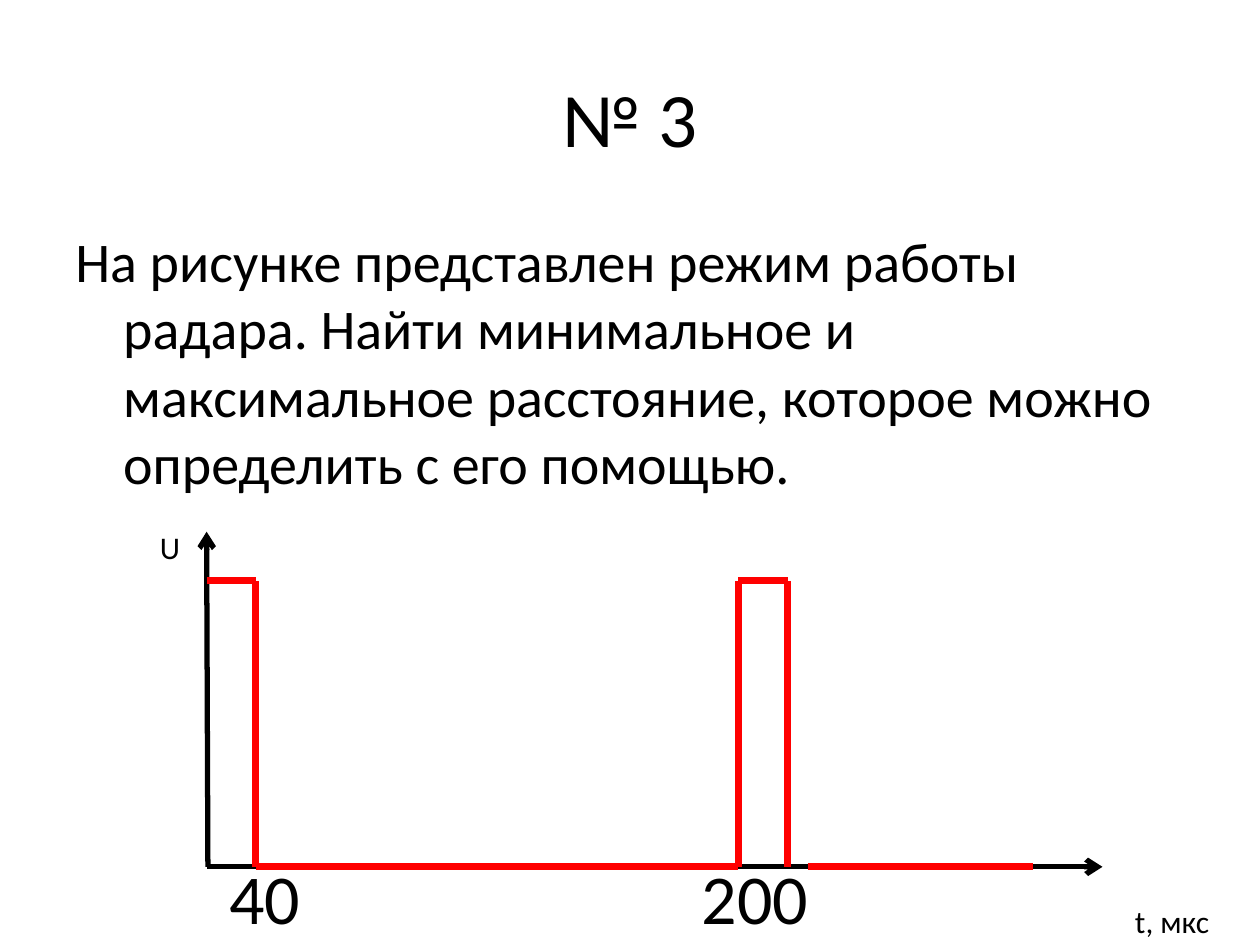
from lxml import etree
from pptx import Presentation
from pptx.dml.color import RGBColor
from pptx.enum.shapes import MSO_CONNECTOR
from pptx.enum.text import MSO_ANCHOR, PP_ALIGN
from pptx.oxml.ns import qn
from pptx.util import Inches, Pt

STRAIGHT = MSO_CONNECTOR.STRAIGHT
LEFT, CENTER = PP_ALIGN.LEFT, PP_ALIGN.CENTER
TOP, MIDDLE = MSO_ANCHOR.TOP, MSO_ANCHOR.MIDDLE
BLACK, RED = "000000", "FF0000"

presentation = Presentation()
presentation.slide_width = Inches(10)
presentation.slide_height = Inches(7.5)
slide = presentation.slides.add_slide(presentation.slide_layouts[6])

# All positions are percentages of the slide's width and height.
column = presentation.slide_width / 100
row = presentation.slide_height / 100


def add_text(text, left, top, width, height, size, align=LEFT, anchor=TOP, wrap=True):
    box = slide.shapes.add_textbox(
        int(left * column), int(top * row), int(width * column), int(height * row))
    frame = box.text_frame
    frame.text = text
    frame.word_wrap = wrap
    frame.vertical_anchor = anchor
    paragraph = frame.paragraphs[0]
    paragraph.alignment = align
    font = paragraph.runs[0].font
    font.name = "Calibri"
    font.size = Pt(size)
    font.color.rgb = RGBColor.from_string(BLACK)
    return paragraph


def add_line(start, end, color, width, arrow=False):
    line = slide.shapes.add_connector(
        STRAIGHT, int(start[0] * column), int(start[1] * row),
        int(end[0] * column), int(end[1] * row))
    line.line.color.rgb = RGBColor.from_string(color)
    line.line.width = Pt(width)
    properties = line._element.spPr
    if arrow:
        etree.SubElement(properties.find(qn("a:ln")), qn("a:tailEnd"), type="arrow")
    etree.SubElement(properties, qn("a:effectLst"))


add_text("№ 3", 5, 4, 90, 16.67, 44, CENTER, MIDDLE)
task = add_text(
    "На рисунке представлен режим работы радара. Найти минимальное и "
    "максимальное расстояние, которое можно определить с его помощью.",
    5, 23.33, 90, 30.8, 32)
task.space_before = Pt(6.4)
indent = Inches(0.38)
task_properties = task._p.get_or_add_pPr()
task_properties.set("marL", str(indent))
task_properties.set("indent", str(-indent))

# Axes
origin_x, baseline, pulse_top = 16.4, 91.73, 61.47
add_line((origin_x, baseline), (87.5, baseline), BLACK, 3, arrow=True)
add_line((16.5, baseline), (origin_x, 56.27), BLACK, 3, arrow=True)

# Radar signal: two equal pulses with pauses between them
pulse_width = 3.9
first_end = origin_x + pulse_width
second_start = 58.6
second_end = second_start + pulse_width
for pulse_start in (origin_x, second_start):
    add_line((pulse_start, pulse_top), (pulse_start + pulse_width, pulse_top), RED, 4)
for edge in (first_end, second_start, second_end):
    add_line((edge, pulse_top), (edge, baseline), RED, 4)
for pause_start, pause_end in ((first_end, second_start), (64.1, 82)):
    add_line((pause_start, baseline), (pause_end, baseline), RED, 4)

# Axis names and time marks
for text, left, top, width, height, size in (
    ("U", 11.7, 55.2, 3.6, 5.33, 18),
    ("t, мкс", 89.1, 94.8, 8, 5.33, 18),
    ("40", 17.2, 89.73, 7.7, 10.27, 40),
    ("200", 54.7, 89.73, 10.5, 10.27, 40),
):
    add_text(text, left, top, width, height, size, wrap=False)

presentation.save("out.pptx")
